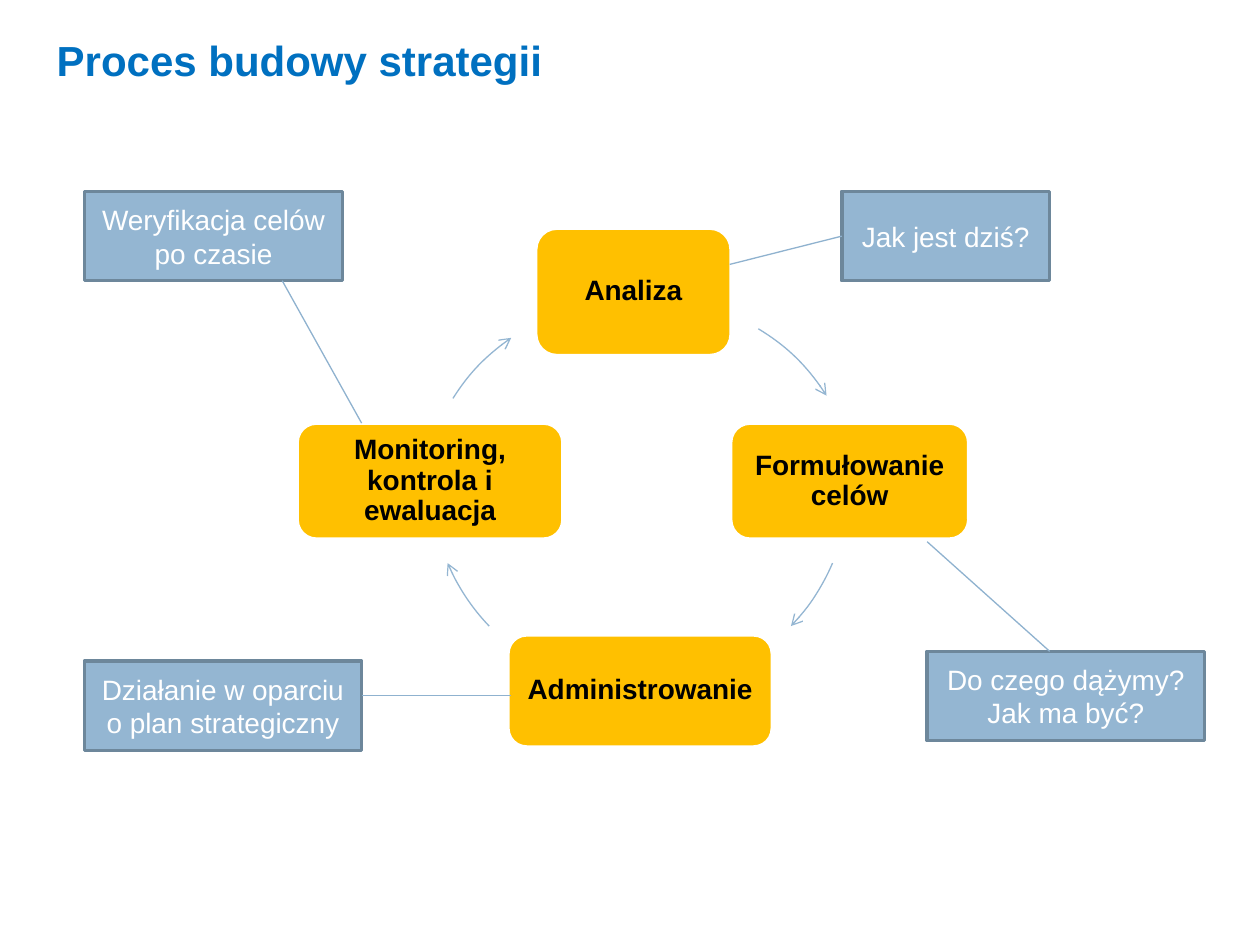
from lxml import etree
from pptx import Presentation
from pptx.dml.color import RGBColor
from pptx.enum.shapes import MSO_CONNECTOR, MSO_SHAPE
from pptx.enum.text import MSO_ANCHOR, PP_ALIGN
from pptx.oxml.ns import qn
from pptx.util import Cm, Pt

RECT, ROUND, ARC = MSO_SHAPE.RECTANGLE, MSO_SHAPE.ROUNDED_RECTANGLE, MSO_SHAPE.ARC
STRAIGHT = MSO_CONNECTOR.STRAIGHT
TOP, MIDDLE = MSO_ANCHOR.TOP, MSO_ANCHOR.MIDDLE
LEFT, CENTER = PP_ALIGN.LEFT, PP_ALIGN.CENTER

COLORS = {
    "title": "0070C0", "stage": "FFC000", "note": "94B6D2", "note_edge": "6D879B",
    "link": "8FB2CF", "white": "FFFFFF", "black": "000000",
}
FONT = "Arial"
TITLE = "Proces budowy strategii"
STAGES = [
    ("Analiza", 10.8, 4.6, 3.94, 2.57),
    ("Formułowanie celów", 14.73, 8.53, 4.8, 2.34),
    ("Administrowanie", 10.24, 12.8, 5.33, 2.26),
    ("Monitoring, kontrola i ewaluacja", 5.99, 8.53, 5.36, 2.34),
]
ARC_SIZE = 8.43
ARCS = [
    (8.89, 6.02, 301.2, 327.6),
    (8.69, 5.49, 23, 43.8),
    (8.69, 5.49, 136.2, 157),
    (8.48, 6.07, 212.3, 235.5),
]
NOTE_HEIGHT = 1.8
NOTES = [
    ("Jak jest dziś?", 16.97, 3.86, 4.19, (14.71, 5.33, 16.97, 4.76), 1),
    ("Do czego dążymy? Jak ma być?", 18.69, 13.13, 5.59, (18.69, 10.92, 21.16, 13.13), None),
    ("Działanie w oparciu o plan strategiczny", 1.7, 13.33, 5.59, (10.31, 14.02, 7.29, 14.02), None),
    ("Weryfikacja celów po czasie", 1.7, 3.86, 5.21, (7.29, 8.53, 5.69, 5.66), None),
]


def rgb(name):
    return RGBColor.from_string(COLORS[name])


def set_line(sp, color, width):
    sp.line.color.rgb = rgb(color)
    sp.line.width = Pt(width)


def write(sp, text, size, color, bold, align, anchor):
    tf = sp.text_frame
    tf.text = text
    tf.word_wrap = True
    tf.vertical_anchor = anchor
    p = tf.paragraphs[0]
    p.alignment = align
    p.font.name, p.font.size, p.font.bold = FONT, Pt(size), bold
    p.font.color.rgb = rgb(color)
    return tf


def add_box(s, kind, text, box, fill, edge, color, bold):
    sp = s.shapes.add_shape(kind, *map(Cm, box))
    sp.shadow.inherit = False
    sp.fill.solid()
    sp.fill.fore_color.rgb = rgb(fill)
    set_line(sp, edge, 2)
    write(sp, text, 16, color, bold, CENTER, MIDDLE)
    return sp


def add_stage(s, text, *box):
    tf = add_box(s, ROUND, text, box, "stage", "white", "black", True).text_frame
    tf.margin_left = tf.margin_right = tf.margin_top = tf.margin_bottom = Cm(0.18)
    tf.paragraphs[0].line_spacing = 0.9


def add_arc(s, left, top, start, end):
    sp = s.shapes.add_shape(ARC, Cm(left), Cm(top), Cm(ARC_SIZE), Cm(ARC_SIZE))
    sp.shadow.inherit = False
    for i, degrees in enumerate((start, end)):
        sp.adjustments[i] = degrees * 0.6
    sp.fill.background()
    set_line(sp, "note", 0.75)
    etree.SubElement(sp.line._get_or_add_ln(), qn("a:tailEnd"), type="arrow")


def add_note(s, text, left, top, width, link, side):
    sp = add_box(s, RECT, text, (left, top, width, NOTE_HEIGHT), "note", "note_edge", "white", False)
    line = s.shapes.add_connector(STRAIGHT, *map(Cm, link))
    if side is not None:
        line.end_connect(sp, side)
    set_line(line, "link", 0.75)
    etree.SubElement(line._element.spPr, qn("a:effectLst"))


def main():
    prs = Presentation()
    prs.slide_width, prs.slide_height = Cm(25.4), Cm(19.05)
    s = prs.slides.add_slide(prs.slide_layouts[5])
    title = s.shapes.title
    title.left, title.top, title.width, title.height = map(Cm, (0.89, 0.56, 11.99, 1.27))
    write(title, TITLE, 24, "title", True, LEFT, TOP)
    for stage, arc in zip(STAGES, ARCS):
        add_stage(s, *stage)
        add_arc(s, *arc)
    for note in NOTES:
        add_note(s, *note)
    prs.save("out.pptx")


if __name__ == "__main__":
    main()
